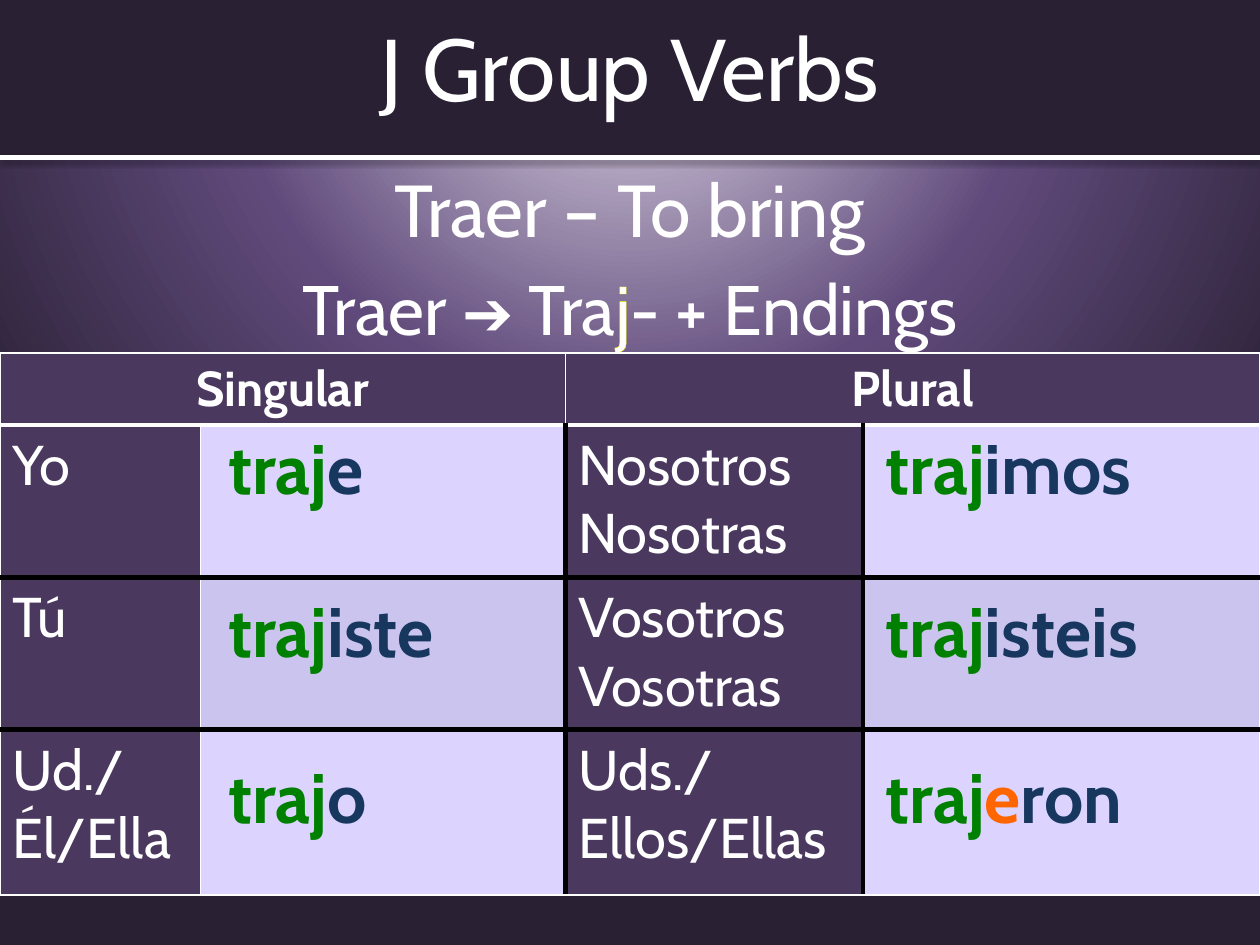
from pptx import Presentation
from pptx.dml.color import RGBColor
from pptx.enum.shapes import MSO_CONNECTOR, MSO_SHAPE
from pptx.enum.text import MSO_ANCHOR, MSO_AUTO_SIZE, PP_ALIGN
from pptx.oxml import parse_xml
from pptx.oxml.ns import nsdecls
from pptx.util import Inches, Pt

C = {
    "white": "FFFFFF", "black": "000000", "band": "292034", "head": "4A385F",
    "light": "DCD3FF", "mid": "CBC4EE", "stem": "008000", "ending": "17375E",
    "irregular": "FF6600", "outline": "FFFF00", "glow": "E6E0EC", "purple": "604A7B",
}
COLS = [1.59, 2.9, 2.36, 3.15]
ROWS = [0.57, 1.21, 1.21, 1.31]
PRONOUNS = [
    (["Yo"], ["Nosotros", "Nosotras"]),
    (["Tú"], ["Vosotros", "Vosotras"]),
    (["Ud./Él/Ella"], ["Uds./Ellos/Ellas"]),
]
STEM = ("traj", "stem")
FORMS = [
    (1.71, 3.34, 2.46, [("e", "ending")]),
    (1.71, 4.63, 2.72, [("iste", "ending")]),
    (1.71, 5.95, 2.46, [("o", "ending")]),
    (6.93, 3.34, 2.82, [("imos", "ending")]),
    (6.93, 4.63, 3.07, [("isteis", "ending")]),
    (6.93, 5.95, 3.07, [("e", "irregular"), ("ron", "ending")]),
]


def rgb(name):
    """Return the named colour."""
    return RGBColor.from_string(C[name])


def place(sp, x, y, w, h):
    """Move and size a shape, in inches."""
    sp.left, sp.top, sp.width, sp.height = (Inches(v) for v in (x, y, w, h))


def add_run(p, text, size, color="white", bold=False, font="Cabin"):
    """Add one formatted run to a paragraph."""
    r = p.add_run()
    r.text = text
    r.font.size, r.font.bold, r.font.name = Pt(size), bold, font
    r.font.color.rgb = rgb(color)
    return r


def outline_run(r, color, width):
    """Draw a thin line around the letters of a run."""
    r.font._element.insert(0, parse_xml(
        f'<a:ln {nsdecls("a")} w="{Pt(width)}"><a:solidFill>'
        f'<a:srgbClr val="{C[color]}"/></a:solidFill></a:ln>'))


def set_background(s):
    """Give the slide a radial gradient centred above its top edge."""
    stops = "".join(
        f'<a:gs pos="{pos * 1000}"><a:srgbClr val="{C[name]}"/></a:gs>'
        for pos, name in ((0, "glow"), (52, "purple"), (100, "band")))
    s._element.cSld.insert(0, parse_xml(
        f'<p:bg {nsdecls("p", "a")}><p:bgPr><a:gradFill rotWithShape="1">'
        f'<a:gsLst>{stops}</a:gsLst><a:path path="circle">'
        '<a:fillToRect l="50000" t="-80000" r="50000" b="180000"/></a:path>'
        '</a:gradFill><a:effectLst/></p:bgPr></p:bg>'))


def add_header_band(s):
    """Add the dark band behind the title and the line below it."""
    sp = s.shapes.add_shape(MSO_SHAPE.RECTANGLE, 0, 0, Inches(10), Inches(1.25))
    sp.shadow.inherit = False
    sp.fill.solid()
    sp.fill.fore_color.rgb = rgb("band")
    sp.line.fill.background()
    s.shapes._spTree.insert(2, sp._element)
    line = s.shapes.add_connector(
        MSO_CONNECTOR.STRAIGHT, 0, Inches(1.25), Inches(10), Inches(1.25))
    line.line.color.rgb = rgb("white")
    line.line.width = Pt(3)
    line._element.spPr.append(parse_xml(
        f'<a:effectLst {nsdecls("a")}><a:outerShdw blurRad="{Pt(3.1)}" '
        f'dist="{Pt(1.6)}" dir="5400000" rotWithShape="0"><a:srgbClr val="{C["black"]}">'
        '<a:alpha val="38000"/></a:srgbClr></a:outerShdw></a:effectLst>'))


def fill_title(sp):
    """Write the slide title."""
    place(sp, 0, 0, 10, 1.06)
    tf = sp.text_frame
    tf.vertical_anchor = MSO_ANCHOR.MIDDLE
    p = tf.paragraphs[0]
    p.alignment = PP_ALIGN.CENTER
    add_run(p, "J Group Verbs", 50)


def fill_subtitle(sp):
    """Write the verb, its meaning and its stem change."""
    place(sp, 0, 1.25, 10, 5.2)
    tf = sp.text_frame
    tf.auto_size = MSO_AUTO_SIZE.NONE
    p = tf.paragraphs[0]
    p.alignment = PP_ALIGN.CENTER
    add_run(p, "Traer – To bring", 42)
    p = tf.add_paragraph()
    p.alignment = PP_ALIGN.CENTER
    add_run(p, "Traer ", 40)
    add_run(p, "➔", 35, font="Arial")
    add_run(p, " ", 30, font="Arial")
    add_run(p, "Tra", 40)
    outline_run(add_run(p, "j", 40), "outline", 0.75)
    add_run(p, "- + Endings", 40)


def set_borders(cell, sides):
    """Set the left, right, top and bottom borders; None means no line."""
    tc_pr = cell._tc.get_or_add_tcPr()
    for side, line in zip("LRTB", sides):
        color, width = line or ("white", 0)
        paint = (f'<a:solidFill><a:srgbClr val="{C[color]}"/></a:solidFill>'
                 if line else "<a:noFill/>")
        tc_pr.append(parse_xml(
            f'<a:ln{side} {nsdecls("a")} w="{Pt(width)}">{paint}</a:ln{side}>'))


def grid_borders(row, col):
    """Return the four borders of a cell in the pronoun table."""
    thin, thick, rule = ("white", 1), ("white", 3), ("black", 3)
    levels = [thin, thick, rule, rule, thin]
    left = rule if row and col >= 2 else thin
    right = rule if row and col in (1, 2) else thin
    return left, right, levels[row], levels[row + 1]


def fill_cell(cell, color, lines=(), size=32, bold=False, align=PP_ALIGN.LEFT):
    """Colour a cell and write one paragraph per line."""
    cell.fill.solid()
    cell.fill.fore_color.rgb = rgb(color)
    tf = cell.text_frame
    for i, text in enumerate(lines):
        p = tf.add_paragraph() if i else tf.paragraphs[0]
        p.alignment = align
        add_run(p, text, size, bold=bold)


def add_pronoun_table(s):
    """Add the table of singular and plural pronouns."""
    tbl = s.shapes.add_table(len(ROWS), len(COLS), 0, Inches(2.8),
                             Inches(sum(COLS)), Inches(sum(ROWS))).table
    for col, width in zip(tbl.columns, COLS):
        col.width = Inches(width)
    for row, height in zip(tbl.rows, ROWS):
        row.height = Inches(height)
    for r in range(len(ROWS)):
        for c in range(len(COLS)):
            set_borders(tbl.cell(r, c), grid_borders(r, c))
    for c, text in ((0, "Singular"), (2, "Plural")):
        tbl.cell(0, c).merge(tbl.cell(0, c + 1))
        fill_cell(tbl.cell(0, c), "head", [text], 28, True, PP_ALIGN.CENTER)
    for r, pair in enumerate(PRONOUNS, 1):
        for c, lines in zip((0, 2), pair):
            fill_cell(tbl.cell(r, c), "head", lines)
            fill_cell(tbl.cell(r, c + 1), "light" if r % 2 else "mid")


def add_form(s, x, y, w, endings):
    """Add a one-cell table holding a conjugated form."""
    tbl = s.shapes.add_table(1, 1, Inches(x), Inches(y), Inches(w), Inches(0.77)).table
    cell = tbl.cell(0, 0)
    set_borders(cell, [None] * 4)
    cell.fill.background()
    for text, color in [STEM, *endings]:
        add_run(cell.text_frame.paragraphs[0], text, 40, color, True)


def main():
    """Build the slide and save it."""
    prs = Presentation()
    prs.slide_width, prs.slide_height = Inches(10), Inches(7.5)
    s = prs.slides.add_slide(prs.slide_layouts[0])
    set_background(s)
    add_header_band(s)
    fill_title(s.shapes.title)
    fill_subtitle(s.placeholders[1])
    add_pronoun_table(s)
    for form in FORMS:
        add_form(s, *form)
    prs.save("out.pptx")


if __name__ == "__main__":
    main()
